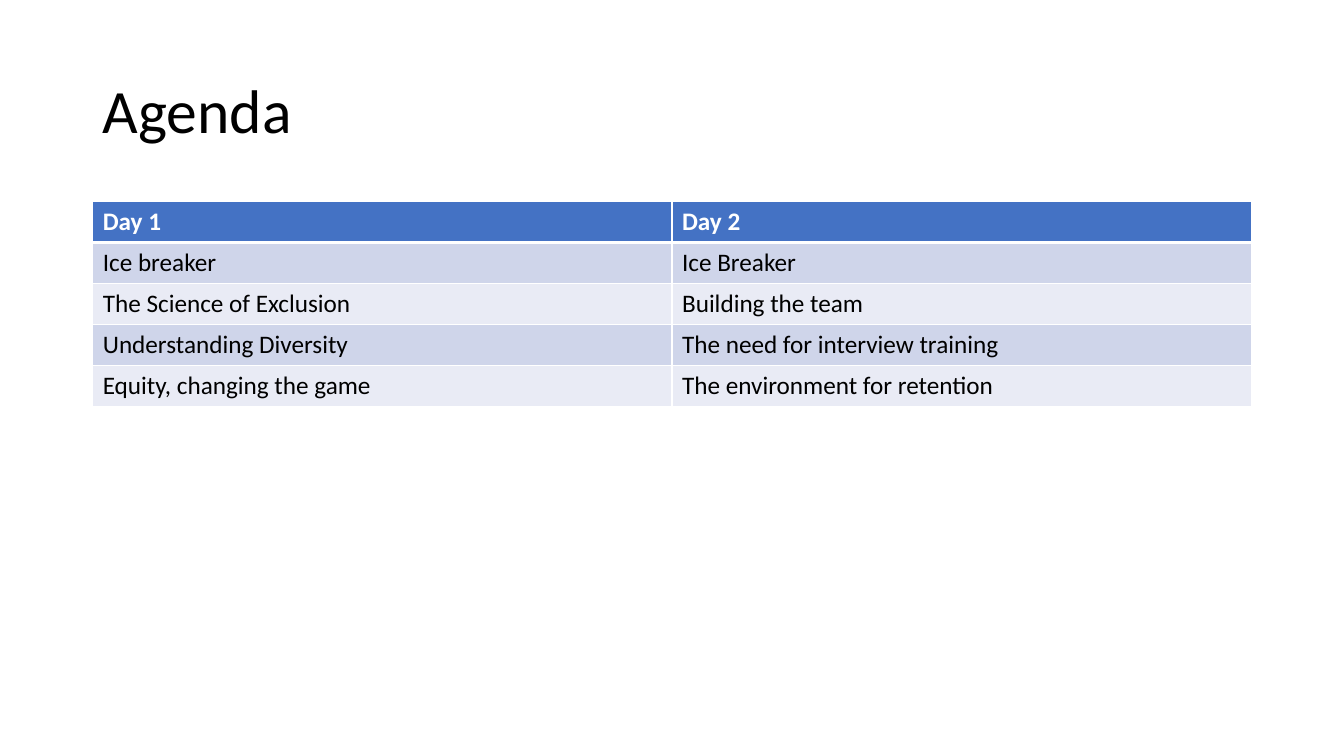
from lxml.etree import SubElement
from pptx import Presentation
from pptx.dml.color import RGBColor
from pptx.enum.text import MSO_ANCHOR, PP_ALIGN
from pptx.oxml.ns import qn
from pptx.util import Inches, Pt

WHITE = RGBColor(0xFF, 0xFF, 0xFF)
BLACK = RGBColor(0x00, 0x00, 0x00)
HEADER_BLUE = RGBColor(0x44, 0x72, 0xC4)
BAND_DARK = RGBColor(0xCF, 0xD5, 0xEA)
BAND_LIGHT = RGBColor(0xE9, 0xEB, 0xF5)
FONT = "Calibri"

AGENDA = [
    ("Day 1", "Day 2"),
    ("Ice breaker", "Ice Breaker"),
    ("The Science of Exclusion", "Building the team"),
    ("Understanding Diversity", "The need for interview training"),
    ("Equity, changing the game", "The environment for retention"),
]


def set_font(paragraph, size, color, bold=False):
    paragraph.font.name = FONT
    paragraph.font.size = Pt(size)
    paragraph.font.color.rgb = color
    paragraph.font.bold = bold


def add_border(cell, side, width):
    properties = cell._tc.get_or_add_tcPr()
    line = SubElement(properties, qn(f"a:ln{side}"), w=str(Pt(width)))
    fill = SubElement(line, qn("a:solidFill"))
    SubElement(fill, qn("a:srgbClr"), val=str(WHITE))


deck = Presentation()
deck.slide_width = Inches(13.33)
deck.slide_height = Inches(7.5)
page = deck.slides.add_slide(deck.slide_layouts[5])

margin = Inches(0.92)
content_width = deck.slide_width - 2 * margin
row_height = Inches(0.406)

title = page.shapes.title
title.left, title.top = margin, Inches(0.4)
title.width, title.height = content_width, Inches(1.45)
title.text_frame.text = "Agenda"
title.text_frame.vertical_anchor = MSO_ANCHOR.MIDDLE
heading = title.text_frame.paragraphs[0]
heading.alignment = PP_ALIGN.LEFT
heading.line_spacing = 0.9
set_font(heading, 44, BLACK)

table = page.shapes.add_table(
    len(AGENDA), len(AGENDA[0]), margin, Inches(2),
    content_width, row_height * len(AGENDA),
).table

for row, entries in enumerate(AGENDA):
    is_header = row == 0
    for column, entry in enumerate(entries):
        cell = table.cell(row, column)
        cell.text = entry
        set_font(cell.text_frame.paragraphs[0], 18,
                 WHITE if is_header else BLACK, is_header)
        for side in "LRTB":
            meets_header = (row, side) in ((0, "B"), (1, "T"))
            add_border(cell, side, 3 if meets_header else 1)
        cell.fill.solid()
        band = BAND_DARK if row % 2 else BAND_LIGHT
        cell.fill.fore_color.rgb = HEADER_BLUE if is_header else band

deck.save("out.pptx")
